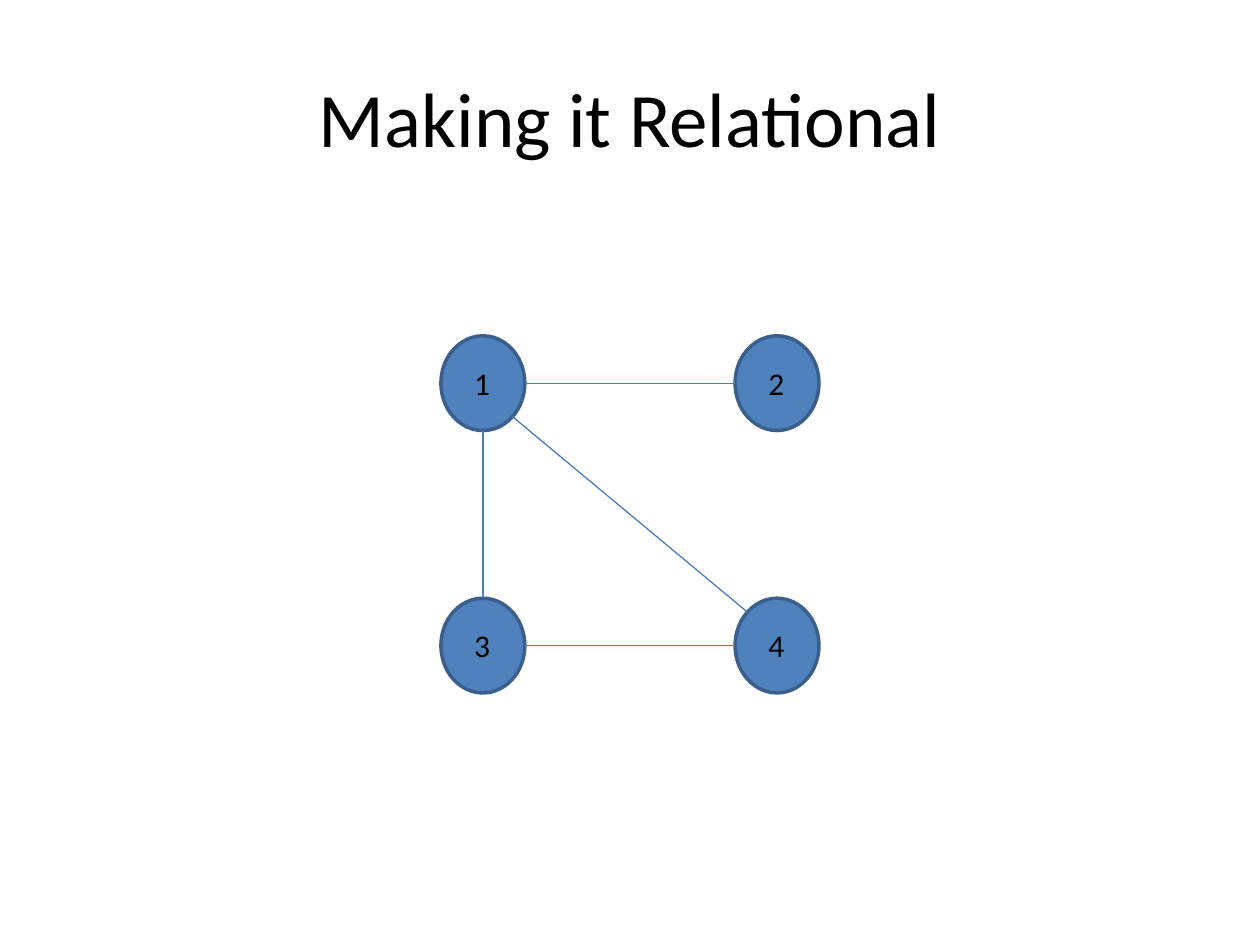
import math
from dataclasses import dataclass

import pptx
import pptx.dml.color
import pptx.enum.shapes
import pptx.enum.text
import pptx.util
from pptx.util import Cm


@dataclass
class Theme:
    font: str = "Calibri"
    text: str = "000000"
    background: str = "FFFFFF"
    node: str = "4F81BD"
    outline: str = "3A5F8C"
    edge: str = "4B7EBC"
    title_size: int = 44
    label_size: int = 18
    outline_width: float = 2
    edge_width: float = 0.75


theme = Theme()


def rgb(value):
    return pptx.dml.color.RGBColor.from_string(value)


def format_text(tf, text, size):
    tf.text = text
    font = tf.paragraphs[0].runs[0].font
    font.name = theme.font
    font.size = pptx.util.Pt(size)
    font.color.rgb = rgb(theme.text)


prs = pptx.Presentation()
prs.slide_width, prs.slide_height = Cm(25.4), Cm(19.05)
s = prs.slides.add_slide(prs.slide_layouts[5])
s.background.fill.solid()
s.background.fill.fore_color.rgb = rgb(theme.background)

title = s.shapes.title
title.left, title.top, title.width, title.height = Cm(1.27), Cm(0.76), Cm(22.86), Cm(3.18)
format_text(title.text_frame, "Making it Relational", theme.title_size)
title.text_frame.vertical_anchor = pptx.enum.text.MSO_ANCHOR.MIDDLE
title.text_frame.paragraphs[0].alignment = pptx.enum.text.PP_ALIGN.CENTER

node_w, node_h = 1.69, 1.91
left, top, step_x, step_y = 8.89, 6.77, 5.93, 5.29
nodes = {str(i + 1): (left + i % 2 * step_x, top + i // 2 * step_y) for i in range(4)}

for x, y in nodes.values():
    sp = s.shapes.add_shape(
        pptx.enum.shapes.MSO_SHAPE.OVAL, Cm(x), Cm(y), Cm(node_w), Cm(node_h))
    sp.shadow.inherit = False
    sp.fill.solid()
    sp.fill.fore_color.rgb = rgb(theme.node)
    sp.line.color.rgb = rgb(theme.outline)
    sp.line.width = pptx.util.Pt(theme.outline_width)

for label, (x, y) in nodes.items():
    sp = s.shapes.add_textbox(Cm(x + 0.42), Cm(y + 0.44), Cm(0.85), Cm(1.02))
    tf = sp.text_frame
    format_text(tf, label, theme.label_size)
    tf.word_wrap = False
    tf.auto_size = pptx.enum.text.MSO_AUTO_SIZE.SHAPE_TO_FIT_TEXT

diagonal = math.sqrt(0.5)
edges = [
    ("1", "2", 1, 0),
    ("1", "3", 0, 1),
    ("1", "4", diagonal, diagonal),
    ("3", "4", 1, 0),
]
for start, end, dx, dy in edges:
    (x1, y1), (x2, y2) = nodes[start], nodes[end]
    line = s.shapes.add_connector(
        pptx.enum.shapes.MSO_CONNECTOR.STRAIGHT,
        Cm(x1 + node_w / 2 * (1 + dx)), Cm(y1 + node_h / 2 * (1 + dy)),
        Cm(x2 + node_w / 2 * (1 - dx)), Cm(y2 + node_h / 2 * (1 - dy)))
    line.line.color.rgb = rgb(theme.edge)
    line.line.width = pptx.util.Pt(theme.edge_width)
    line._element.spPr.append(pptx.oxml.xmlchemy.OxmlElement("a:effectLst"))

prs.save("out.pptx")
